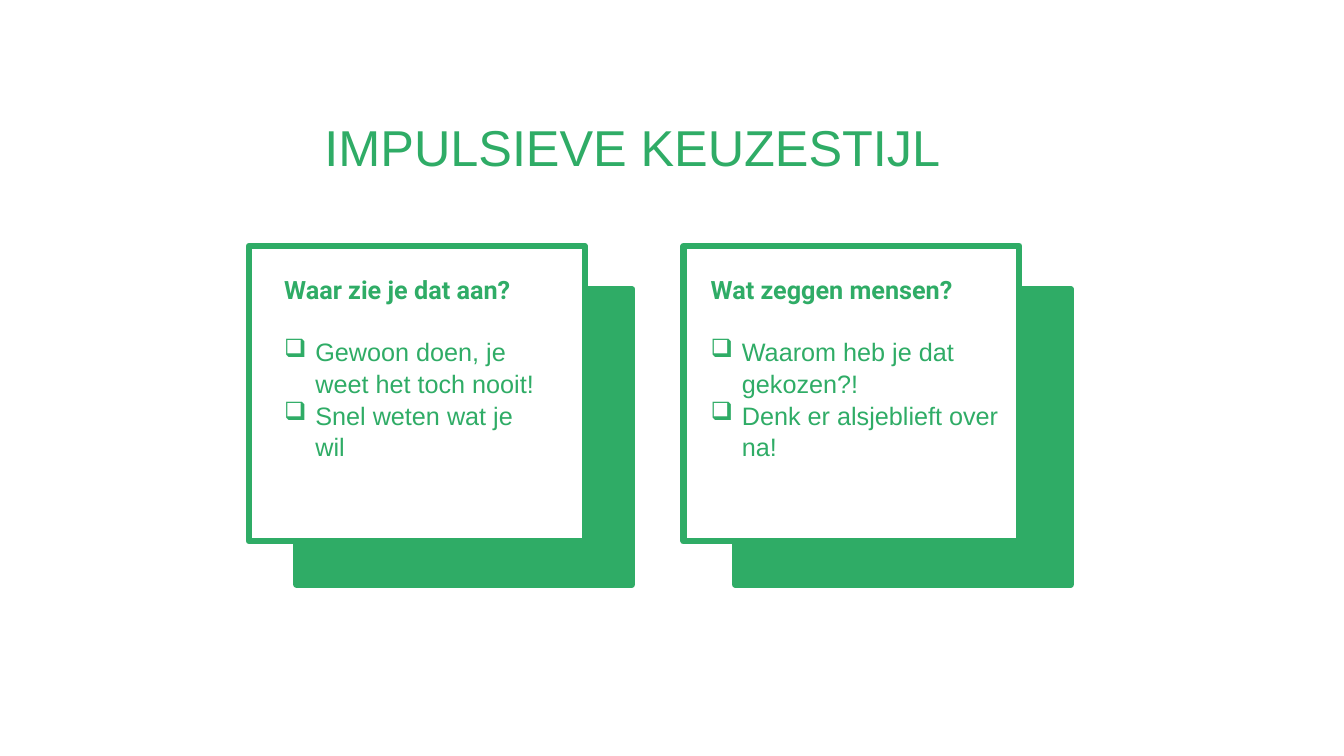
from dataclasses import dataclass

from lxml.etree import SubElement
from pptx import Presentation
from pptx.dml.color import RGBColor as RGB
from pptx.enum.shapes import MSO_SHAPE as SHAPE
from pptx.enum.text import PP_ALIGN as ALIGN
from pptx.oxml.ns import qn
from pptx.slide import Slide
from pptx.text.text import TextFrame, _Paragraph as Paragraph
from pptx.util import Inches, Pt

COLORS = {"green": "2FAC66", "white": "FFFFFF"}
CARD_W, CARD_H = 3.33, 2.93
CARD_TOP, BACK_TOP, TEXT_TOP = 2.44, 2.87, 2.66

TITLE = {"size": Pt(36), "name": "Arial", "bold": False}
HEADING = {"size": Pt(18), "name": "Roboto", "bold": True}
ITEM = {"size": Pt(18), "name": "Arial", "bold": False}


@dataclass
class Card:
    left: float
    back_left: float
    text_left: float
    text_w: float
    text_h: float
    heading: str
    items: list[str]


CARDS = [
    Card(2.47, 2.94, 2.72, 2.77, 2.22, "Waar zie je dat aan?",
         ["Gewoon doen, je weet het toch nooit!", "Snel weten wat je wil"]),
    Card(6.78, 7.29, 6.95, 3.05, 1.92, "Wat zeggen mensen?",
         ["Waarom heb je dat gekozen?!", "Denk er alsjeblieft over na!"]),
]


def add_panel(s: Slide, left: float, top: float, fill: str) -> None:
    sp = s.shapes.add_shape(SHAPE.RECTANGLE, Inches(left), Inches(top),
                            Inches(CARD_W), Inches(CARD_H))
    sp.shadow.inherit = False
    sp.fill.solid()
    sp.fill.fore_color.rgb = RGB.from_string(COLORS[fill])
    sp.line.color.rgb = RGB.from_string(COLORS["green"])
    sp.line.width = Pt(4.5)


def add_box(s: Slide, left: float, top: float, w: float, h: float) -> TextFrame:
    tf = s.shapes.add_textbox(Inches(left), Inches(top), Inches(w), Inches(h)).text_frame
    tf.word_wrap = True
    return tf


def add_text(p: Paragraph, text: str, style: dict) -> None:
    r = p.add_run()
    r.text = text
    for key, value in style.items():
        setattr(r.font, key, value)
    r.font.color.rgb = RGB.from_string(COLORS["green"])


def add_bullet(p: Paragraph) -> None:
    pPr = p._p.get_or_add_pPr()
    pPr.set("marL", str(Inches(0.31)))
    pPr.set("indent", str(-Inches(0.31)))
    SubElement(pPr, qn("a:buChar"), char="❑")


def add_card_text(s: Slide, card: Card) -> None:
    tf = add_box(s, card.text_left, TEXT_TOP, card.text_w, card.text_h)
    p = tf.paragraphs[0]
    p.line_spacing = 1.05
    add_text(p, card.heading, HEADING)
    for i, item in enumerate(card.items):
        p = tf.add_paragraph()
        p.line_spacing = 1.05
        p.space_before = Pt(0 if i else 21.5)
        add_bullet(p)
        add_text(p, item, ITEM)


def main() -> None:
    prs = Presentation()
    prs.slide_width, prs.slide_height = Inches(13.33), Inches(7.5)
    s = prs.slides.add_slide(prs.slide_layouts[6])
    for card in CARDS:
        add_panel(s, card.back_left, BACK_TOP, "green")
    for card in CARDS:
        add_panel(s, card.left, CARD_TOP, "white")
    p = add_box(s, 0.66, 1.1, 11.23, 0.71).paragraphs[0]
    p.alignment = ALIGN.CENTER
    add_text(p, "IMPULSIEVE KEUZESTIJL", TITLE)
    for card in CARDS:
        add_card_text(s, card)
    prs.save("out.pptx")


if __name__ == "__main__":
    main()
